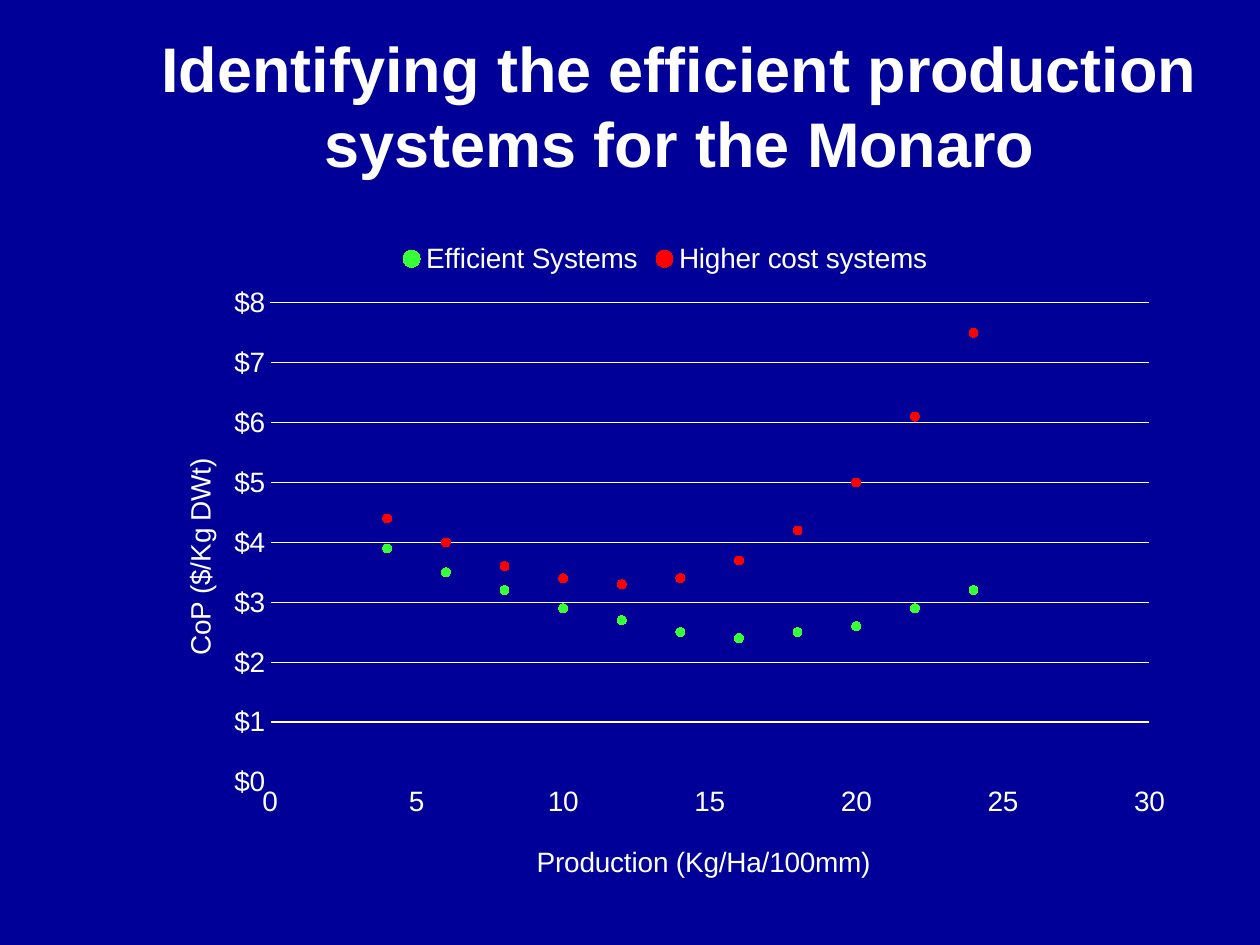
from pptx import Presentation, util as u
from pptx.chart.data import XyChartData
from pptx.dml.color import RGBColor
from pptx.enum import chart as charts, text
from pptx.oxml import parse_xml
from pptx.oxml.ns import nsdecls, qn

PX = u.Inches(1) / 126
FONT = "Arial"
COLORS = {"navy": "000099", "white": "FFFFFF", "green": "37FF37", "red": "FF0000"}

PRODUCTION = range(4, 25, 2)
SYSTEMS = [
    ("Efficient Systems", "green",
     [3.9, 3.5, 3.2, 2.9, 2.7, 2.5, 2.4, 2.5, 2.6, 2.9, 3.2]),
    ("Higher cost systems", "red",
     [4.4, 4, 3.6, 3.4, 3.3, 3.4, 3.7, 4.2, 5, 6.1, 7.5]),
]


def px(*lengths):
    return [round(length * PX) for length in lengths]


def color(name):
    return RGBColor.from_string(COLORS[name])


def format_font(font, size, bold=False, fill="white"):
    font.name = FONT
    font.size = u.Pt(size)
    font.bold = bold
    font.color.rgb = color(fill)


def write_text(frame, wording, align=text.PP_ALIGN.CENTER, **style):
    paragraph = frame.paragraphs[0]
    paragraph.alignment = align
    run = paragraph.add_run()
    run.text = wording
    format_font(run.font, **style)


def fill_solid(fill, name):
    fill.solid()
    fill.fore_color.rgb = color(name)


def place_part(element, index, box, left, top, width=None, height=None):
    """Place a chart part at px offsets within the chart box."""
    for old in element.findall(qn("c:layout")):
        element.remove(old)
    fields = [("xMode", "edge"), ("yMode", "edge"),
              ("x", round(left / box[2], 3)), ("y", round(top / box[3], 3))]
    if width:
        fields.insert(0, ("layoutTarget", "inner"))
        fields += [("w", round(width / box[2], 3)), ("h", round(height / box[3], 3))]
    inner = "".join(f'<c:{tag} val="{value}"/>' for tag, value in fields)
    element.insert(index, parse_xml(
        f'<c:layout {nsdecls("c")}><c:manualLayout>{inner}</c:manualLayout></c:layout>'))


def add_title(slide, box):
    title = slide.shapes.title
    title.left, title.top, title.width, title.height = px(*box)
    frame = title.text_frame
    frame.word_wrap = True
    frame.auto_size = text.MSO_AUTO_SIZE.NONE
    frame.vertical_anchor = text.MSO_ANCHOR.MIDDLE
    write_text(frame, "Identifying the efficient production systems for the Monaro",
               size=36, bold=True)


def format_axis(axis, caption, box, offset, maximum, step, number_format):
    axis.minimum_scale, axis.maximum_scale, axis.major_unit = 0, maximum, step
    axis.major_tick_mark = axis.minor_tick_mark = charts.XL_TICK_MARK.NONE
    axis.tick_labels.number_format = number_format
    axis.tick_labels.number_format_is_linked = False
    format_font(axis.tick_labels.font, 16)
    axis.format.line.color.rgb = color("navy")
    axis.format.line.width = u.Pt(0.75)
    axis.has_major_gridlines = False
    write_text(axis.axis_title.text_frame, caption, size=16)
    place_part(axis.axis_title._element, 1, box, *offset)


def add_cost_chart(slide, box):
    data = XyChartData()
    for name, _, costs in SYSTEMS:
        series = data.add_series(name)
        for production, cost in zip(PRODUCTION, costs):
            series.add_data_point(production, cost)
    chart = slide.shapes.add_chart(
        charts.XL_CHART_TYPE.XY_SCATTER, *px(*box), data).chart
    chart.has_title = False
    format_font(chart.font, 16)

    # Axes and gridlines
    format_axis(chart.category_axis, "Production (Kg/Ha/100mm)", box,
                (388, 615), 30, 5, "General")
    format_axis(chart.value_axis, "CoP ($/Kg DWt)", box,
                (33, 229), 8, 1, '"$"#,##0')
    chart.value_axis.has_major_gridlines = True
    grid = chart.value_axis.major_gridlines.format.line
    grid.color.rgb = color("white")
    grid.width = u.Pt(0.75)

    # Legend and plot area
    chart.has_legend = True
    chart.legend.position = charts.XL_LEGEND_POSITION.TOP
    chart.legend.include_in_layout = False
    format_font(chart.legend.font, 16)
    place_part(chart.legend._element, 1, box, 250, 14)
    plot_area = chart._chartSpace.find(f'{qn("c:chart")}/{qn("c:plotArea")}')
    place_part(plot_area, 0, box, 126, 79, 879, 479)

    # Markers without joining lines
    chart.plots[0].vary_by_categories = False
    for series, (_, shade, _) in zip(chart.plots[0].series, SYSTEMS):
        series.format.line.fill.background()
        series.marker.style = charts.XL_MARKER_STYLE.CIRCLE
        series.marker.size = 5
        fill_solid(series.marker.format.fill, shade)
        series.marker.format.line.color.rgb = color(shade)


def main():
    presentation = Presentation()
    presentation.slide_width, presentation.slide_height = px(1260, 945)
    slide = presentation.slides.add_slide(presentation.slide_layouts[5])
    fill_solid(slide.background.fill, "navy")
    add_title(slide, (144, 26, 1071, 158))
    add_cost_chart(slide, (144, 224, 1042, 674))
    presentation.save("out.pptx")


if __name__ == "__main__":
    main()
